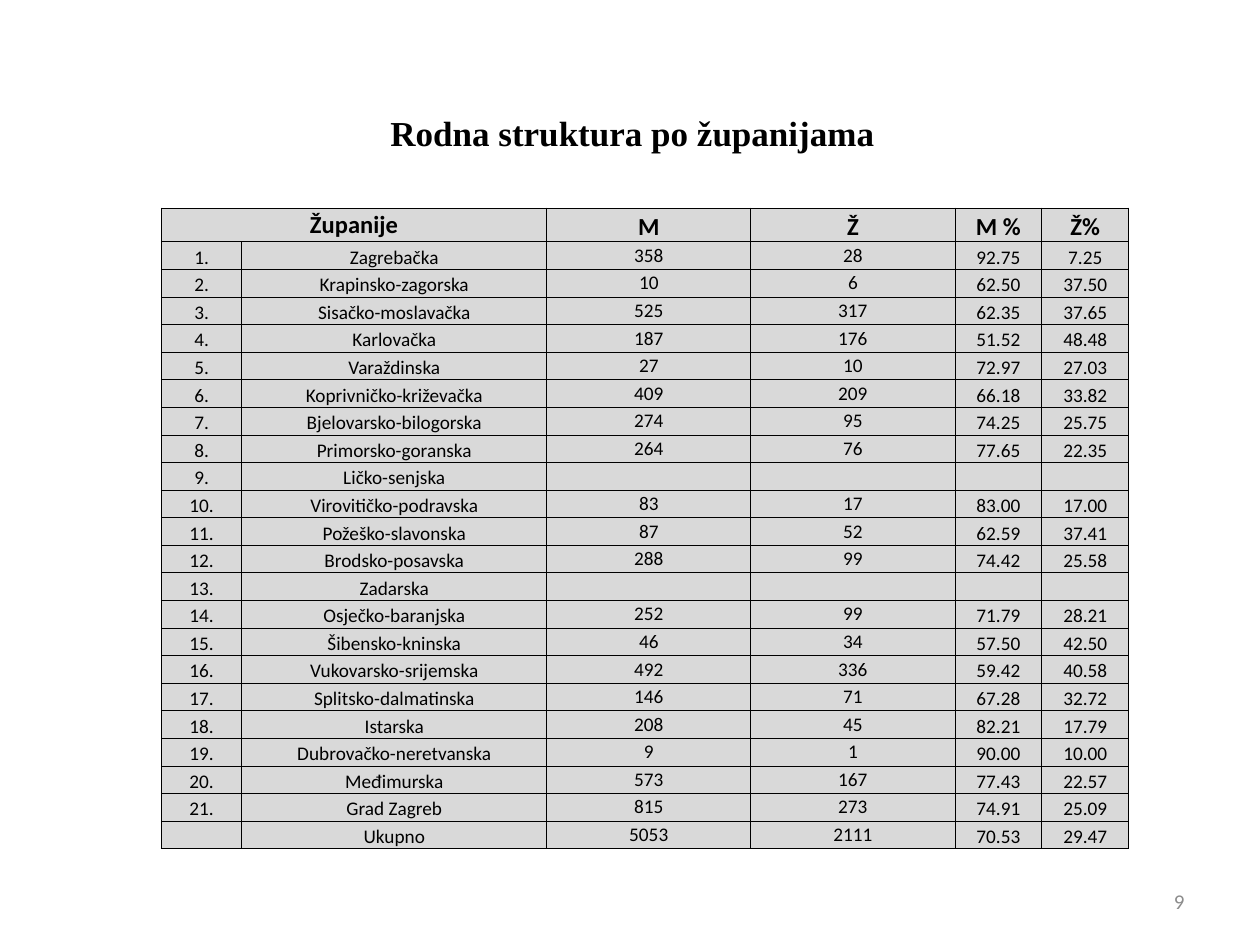
import lxml.etree
import pptx
import pptx.dml.color
import pptx.enum.text
import pptx.oxml.ns
import pptx.util

Inches = pptx.util.Inches
Pt = pptx.util.Pt
ALIGN = pptx.enum.text.PP_ALIGN
ANCHOR = pptx.enum.text.MSO_ANCHOR
qn = pptx.oxml.ns.qn

HEADING = "Rodna struktura po županijama"
PAGE = "9"
HEADERS = ["Županije", "", "M", "Ž", "M %", "Ž%"]
COUNTIES = [
    ("Zagrebačka", 358, 28),
    ("Krapinsko-zagorska", 10, 6),
    ("Sisačko-moslavačka", 525, 317),
    ("Karlovačka", 187, 176),
    ("Varaždinska", 27, 10),
    ("Koprivničko-križevačka", 409, 209),
    ("Bjelovarsko-bilogorska", 274, 95),
    ("Primorsko-goranska", 264, 76),
    ("Ličko-senjska", 0, 0),
    ("Virovitičko-podravska", 83, 17),
    ("Požeško-slavonska", 87, 52),
    ("Brodsko-posavska", 288, 99),
    ("Zadarska", 0, 0),
    ("Osječko-baranjska", 252, 99),
    ("Šibensko-kninska", 46, 34),
    ("Vukovarsko-srijemska", 492, 336),
    ("Splitsko-dalmatinska", 146, 71),
    ("Istarska", 208, 45),
    ("Dubrovačko-neretvanska", 9, 1),
    ("Međimurska", 573, 167),
    ("Grad Zagreb", 815, 273),
]
TOTAL = ("Ukupno", sum(c[1] for c in COUNTIES), sum(c[2] for c in COUNTIES))

COLUMN_WIDTHS = [0.64, 2.42, 1.62, 1.62, 0.69, 0.69]
TABLE_HEIGHT = 5.09
HEADER_HEIGHT = 0.27


def rgb(value):
    return pptx.dml.color.RGBColor.from_string(value)


def style(paragraph, size, color, align, font="Calibri", bold=False):
    paragraph.alignment = align
    for run in paragraph.runs:
        run.font.name = font
        run.font.size = Pt(size)
        run.font.bold = bold
        run.font.color.rgb = rgb(color)


def county_row(number, county):
    name, men, women = county
    everyone = men + women
    if not everyone:
        return [number, name, "", "", "", ""]
    shares = [f"{100 * count / everyone:.2f}" for count in (men, women)]
    return [number, name, str(men), str(women), *shares]


def add_borders(cell, color, width):
    properties = cell._tc.get_or_add_tcPr()
    for side in ("a:lnL", "a:lnR", "a:lnT", "a:lnB"):
        line = lxml.etree.SubElement(properties, qn(side), w=str(Pt(width)))
        fill = lxml.etree.SubElement(line, qn("a:solidFill"))
        lxml.etree.SubElement(fill, qn("a:srgbClr"), val=color)


def fill_cell(cell, text, size, bold, anchor):
    add_borders(cell, "000000", 0.5)
    cell.fill.solid()
    cell.fill.fore_color.rgb = rgb("D9D9D9")
    cell.margin_left = cell.margin_right = cell.margin_top = cell.margin_bottom = 0
    cell.vertical_anchor = anchor
    paragraph = cell.text_frame.paragraphs[0]
    paragraph.text = text
    style(paragraph, size, "000000", ALIGN.CENTER, bold=bold)
    if not text:
        paragraph._p.get_or_add_endParaRPr().set("sz", str(size * 100))


def add_county_table(slide):
    rows = [HEADERS]
    rows += [county_row(f"{i}.", county) for i, county in enumerate(COUNTIES, 1)]
    rows.append(county_row("", TOTAL))
    table = slide.shapes.add_table(
        len(rows), len(HEADERS), Inches(1.28), Inches(1.65),
        Inches(sum(COLUMN_WIDTHS)), Inches(TABLE_HEIGHT)).table
    table.first_row = table.horz_banding = False
    for column, width in zip(table.columns, COLUMN_WIDTHS):
        column.width = Inches(width)
    county_height = (TABLE_HEIGHT - HEADER_HEIGHT) / (len(rows) - 1)
    for r, values in enumerate(rows):
        is_header = r == 0
        table.rows[r].height = Inches(HEADER_HEIGHT if is_header else county_height)
        middle_columns = (0, 1) if is_header else (2, 3)
        for c, text in enumerate(values):
            anchor = ANCHOR.MIDDLE if c in middle_columns else ANCHOR.BOTTOM
            fill_cell(table.cell(r, c), text, 14 if is_header else 11, is_header, anchor)
    table.cell(0, 0).merge(table.cell(0, 1))


def main():
    deck = pptx.Presentation()
    deck.slide_width, deck.slide_height = Inches(10), Inches(7.5)
    slide = deck.slides.add_slide(deck.slide_layouts[5])

    heading = slide.shapes.title
    heading.left, heading.top = Inches(0.52), Inches(0.43)
    heading.width, heading.height = Inches(9), Inches(1.25)
    heading.text_frame.text = HEADING
    heading.text_frame.vertical_anchor = ANCHOR.MIDDLE
    style(heading.text_frame.paragraphs[0], 20, "000000", ALIGN.CENTER,
          "Times New Roman", True)

    page = slide.shapes.add_textbox(
        Inches(7.17), Inches(6.95), Inches(2.33), Inches(0.4)).text_frame
    page.word_wrap = True
    page.vertical_anchor = ANCHOR.MIDDLE
    page.text = PAGE
    style(page.paragraphs[0], 12, "8C8C8C", ALIGN.RIGHT)

    add_county_table(slide)
    deck.save("out.pptx")


if __name__ == "__main__":
    main()
